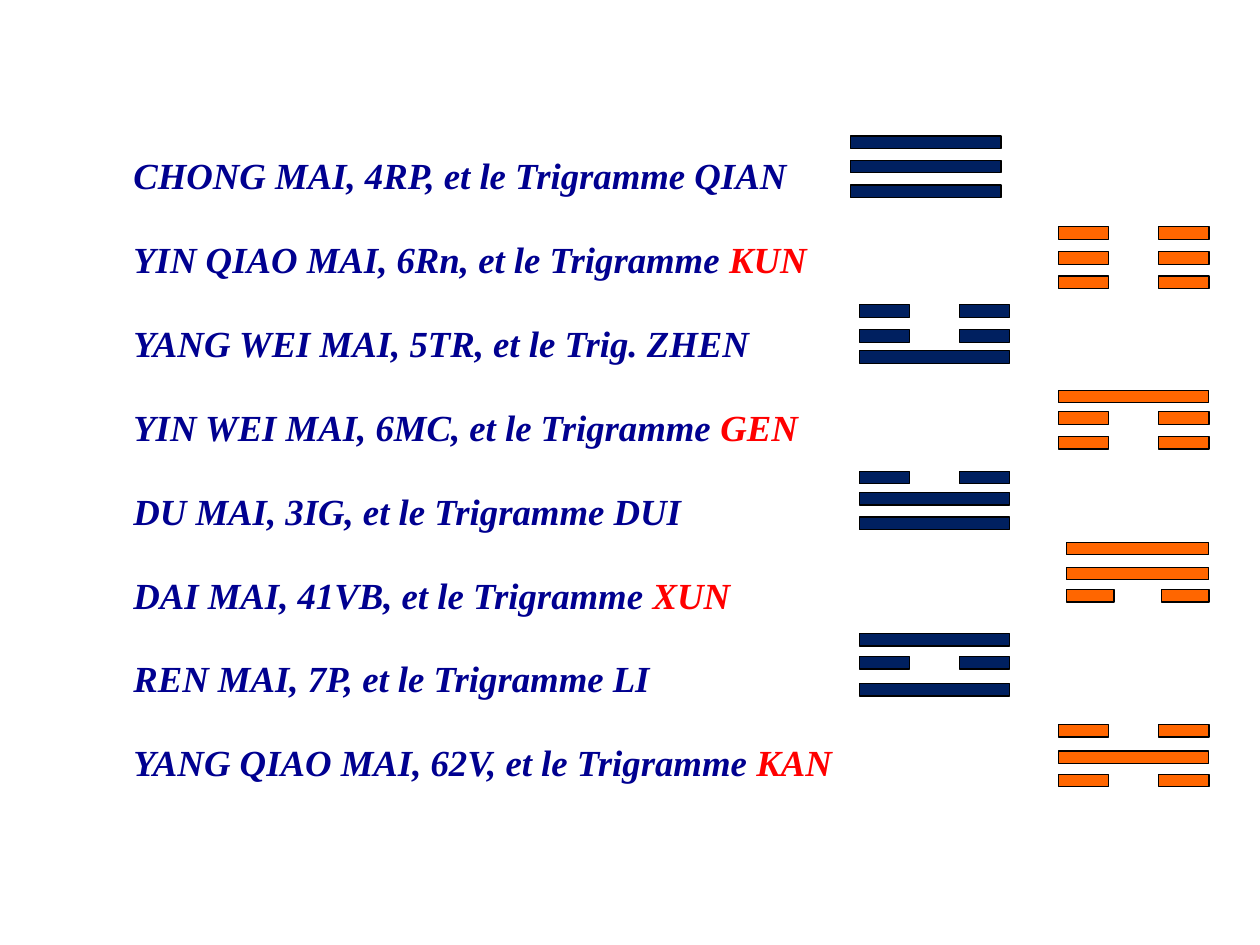
import pptx
import pptx.util
import pptx.dml.color
import pptx.enum.shapes

Pt = pptx.util.Pt
RGB = pptx.dml.color.RGBColor
BLUE = RGB(0x00, 0x00, 0x90)
RED = RGB(0xFF, 0x00, 0x00)
NAVY = RGB(0x00, 0x20, 0x60)
ORANGE = RGB(0xFF, 0x66, 0x00)
BLACK = RGB(0x00, 0x00, 0x00)
RECT = pptx.enum.shapes.MSO_SHAPE.RECTANGLE

# Each line: plain text, then the name shown in red
LINES = [
    ("CHONG MAI, 4RP, et le Trigramme QIAN", ""),
    ("YIN QIAO MAI, 6Rn, et le Trigramme ", "KUN"),
    ("YANG WEI MAI, 5TR, et le Trig. ZHEN", ""),
    ("YIN WEI MAI, 6MC, et le Trigramme ", "GEN"),
    ("DU MAI, 3IG, et le Trigramme DUI", ""),
    ("DAI MAI, 41VB, et le Trigramme ", "XUN"),
    ("REN MAI, 7P, et le Trigramme LI", ""),
    ("YANG QIAO MAI, 62V, et le Trigramme ", "KAN"),
]

# Each trigram: left, width, colour, bars from the top ("-" whole, ":" broken), bar tops
SIGNS = [
    (486, 86, NAVY, "---", (77.8, 91.6, 105.8)),
    (604.8, 86, ORANGE, ":::", (129.6, 143.8, 157.8)),
    (491, 86, NAVY, "::-", (174.2, 188.4, 200.4)),
    (604.8, 86, ORANGE, "-::", (223, 235.3, 249.4)),
    (491, 86, NAVY, ":--", (269.3, 281.4, 295.5)),
    (609.4, 81.4, ORANGE, "--:", (309.9, 324.2, 336.8)),
    (491, 86, NAVY, "-:-", (362, 375.2, 390.5)),
    (604.8, 86, ORANGE, ":-:", (414, 429.2, 442.4)),
]


def add_bar(slide, left, top, width, color):
    bar = slide.shapes.add_shape(RECT, Pt(left), Pt(top), Pt(width), Pt(7.2))
    bar.shadow.inherit = False
    bar.fill.solid()
    bar.fill.fore_color.rgb = color
    bar.line.color.rgb = BLACK
    bar.line.width = Pt(0.75)


def add_sign(slide, left, width, color, kinds, tops):
    third = width / 3
    for kind, top in zip(kinds, tops):
        if kind == "-":
            add_bar(slide, left, top, width, color)
        else:
            add_bar(slide, left, top, third, color)
            add_bar(slide, left + 2 * third, top, third, color)


def add_list(slide):
    box = slide.shapes.add_textbox(Pt(69.1), Pt(82), Pt(540), Pt(374.4))
    frame = box.text_frame
    frame.word_wrap = True
    frame.margin_top = Pt(5.5)
    for i, (text, name) in enumerate(LINES):
        para = frame.paragraphs[0] if i == 0 else frame.add_paragraph()
        para.space_after = Pt(22.7)
        font = para.font
        font.name = "Times New Roman"
        font.size = Pt(21)
        font.bold = font.italic = True
        for part, color in ((text, BLUE), (name, RED)):
            if part:
                run = para.add_run()
                run.text = part
                run.font.color.rgb = color


def main():
    deck = pptx.Presentation()
    deck.slide_width, deck.slide_height = Pt(720), Pt(540)
    slide = deck.slides.add_slide(deck.slide_layouts[6])
    # List of the vessels
    add_list(slide)
    # Trigrams at the right
    for sign in SIGNS:
        add_sign(slide, *sign)
    deck.save("out.pptx")


if __name__ == "__main__":
    main()
